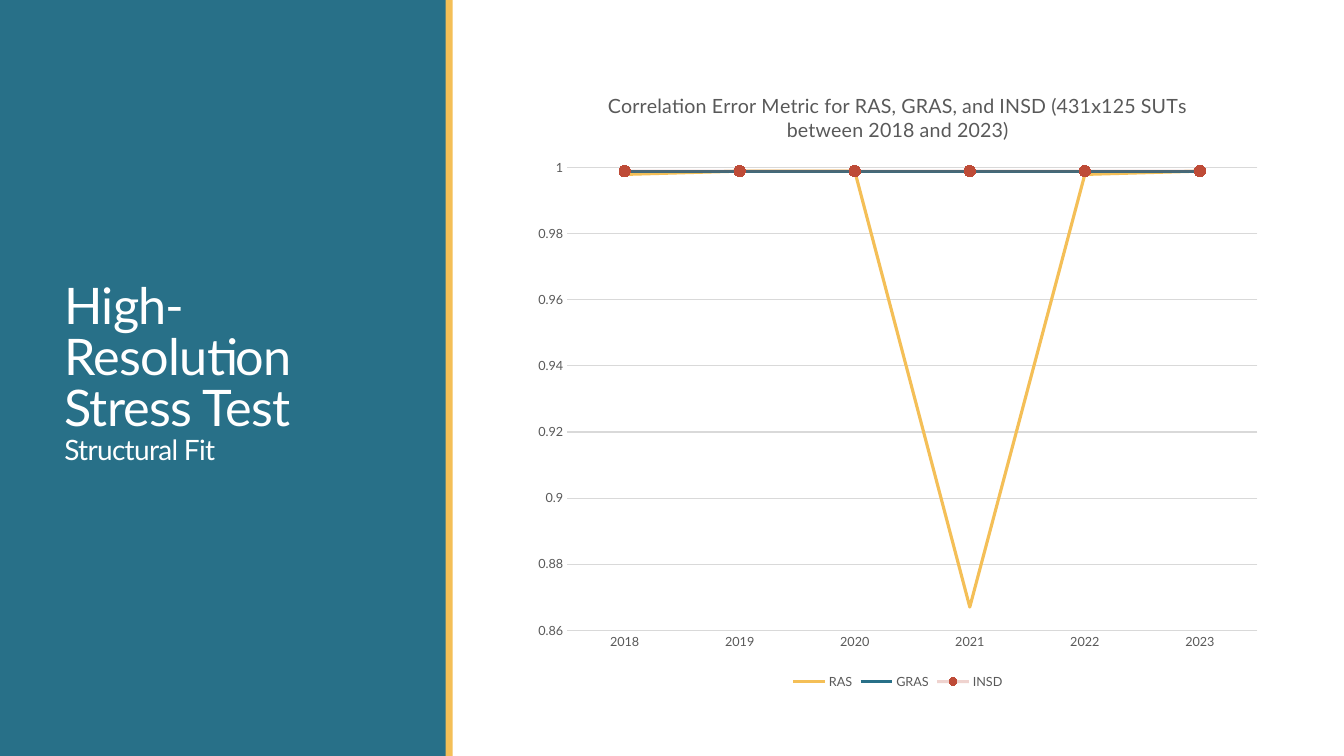
"""Build the slide on structural fit in the high-resolution stress test."""
from lxml import etree
from pptx import Presentation
from pptx import util as u
from pptx.chart.data import CategoryChartData
from pptx.dml.color import RGBColor
from pptx.enum import chart as charts, shapes, text
from pptx.oxml.ns import qn

FONT = "Lato"
COLORS = {"teal": "287088", "gold": "F4BF57", "red": "BE4B37",
          "white": "FFFFFF", "gray": "595959", "grid": "D9D9D9"}
PANELS = [("teal", 0, 4.43), ("gold", 4.42, 0.07)]
HEADING = [("High-Resolution Stress Test", 36), ("Structural Fit", 20)]
HEADING_AREA = (0.54, 0.56, 3.37, 6.31)
CHART_AREA = (5.19, 0.69, 7.43, 6.19)
CHART_TITLE = "Correlation Error Metric for RAS, GRAS, and INSD (431x125 SUTs between 2018 and 2023)"
YEARS = ["2018", "2019", "2020", "2021", "2022", "2023"]
SERIES = [
    ("RAS", "gold", [0.998, 0.999, 0.999, 0.867, 0.998, 0.999]),
    ("GRAS", "teal", [0.999, 0.999, 0.999, 0.999, 0.999, 0.999]),
    ("INSD", "red", [0.999, 0.999, 0.999, 0.999, 0.999, 0.999]),
]


def set_values(target, **values):
    for name, value in values.items():
        setattr(target, name, value)


def rgb(color):
    return RGBColor.from_string(COLORS[color])


def set_font(font, size, color):
    set_values(font, name=FONT, size=u.Pt(size), bold=False)
    font.color.rgb = rgb(color)


def set_line(line, color, width):
    line.color.rgb = rgb(color)
    line.width = u.Pt(width)


def add_panel(page, color, left, width, height):
    panel = page.shapes.add_shape(shapes.MSO_SHAPE.RECTANGLE, u.Inches(left), 0,
                                  u.Inches(width), height)
    panel.shadow.inherit = False
    panel.fill.solid()
    panel.fill.fore_color.rgb = rgb(color)
    panel.line.fill.background()


def add_heading(page):
    box = page.shapes.add_textbox(*map(u.Inches, HEADING_AREA))
    set_values(box.text_frame, word_wrap=True, vertical_anchor=text.MSO_ANCHOR.MIDDLE)
    para = box.text_frame.paragraphs[0]
    para.line_spacing = 0.85
    for index, (words, size) in enumerate(HEADING):
        if index:
            para.add_line_break()
        span = para.add_run()
        span.text = words
        set_font(span.font, size, "white")
        span.font._element.set("spc", "-50")


def style_axes(chart):
    for axis in (chart.category_axis, chart.value_axis):
        set_values(axis, major_tick_mark=charts.XL_TICK_MARK.NONE,
                   minor_tick_mark=charts.XL_TICK_MARK.NONE)
        set_font(axis.tick_labels.font, 9, "gray")
    set_line(chart.category_axis.format.line, "grid", 0.75)
    values = chart.value_axis
    set_values(values, minimum_scale=0.86, maximum_scale=1, major_unit=0.02,
               has_major_gridlines=True)
    values.format.line.fill.background()
    set_line(values.major_gridlines.format.line, "grid", 0.75)
    set_values(values.tick_labels, number_format="General", number_format_is_linked=False)


def style_series(chart):
    chart.plots[0].vary_by_categories = False
    for series, (name, color, _) in zip(chart.plots[0].series, SERIES):
        series.smooth = False
        set_line(series.format.line, color, 2.25)
        series.marker.style = charts.XL_MARKER_STYLE.NONE
        if name == "INSD":
            set_values(series.marker, style=charts.XL_MARKER_STYLE.CIRCLE, size=8)
            series.marker.format.fill.solid()
            series.marker.format.fill.fore_color.rgb = rgb(color)
            set_line(series.marker.format.line, color, 0.75)
            tint = series._element.xpath("c:spPr/a:ln/a:solidFill/a:srgbClr")[0]
            etree.SubElement(tint, qn("a:alpha")).set("val", "23000")


def add_line_chart(page):
    data = CategoryChartData()
    data.categories = YEARS
    for name, _, values in SERIES:
        data.add_series(name, values)
    chart = page.shapes.add_chart(charts.XL_CHART_TYPE.LINE_MARKERS,
                                  *map(u.Inches, CHART_AREA), data).chart
    set_values(chart.font, name=FONT, size=u.Pt(10))
    set_values(chart, has_title=True, has_legend=True)
    chart.chart_title.include_in_layout = False
    span = chart.chart_title.text_frame.paragraphs[0].add_run()
    span.text = CHART_TITLE
    set_font(span.font, 14, "gray")
    set_values(chart.legend, position=charts.XL_LEGEND_POSITION.BOTTOM, include_in_layout=False)
    set_font(chart.legend.font, 9, "gray")
    style_axes(chart)
    style_series(chart)


def main():
    deck = Presentation()
    set_values(deck, slide_width=u.Inches(13.33), slide_height=u.Inches(7.5))
    page = deck.slides.add_slide(deck.slide_layouts[6])
    for color, left, width in PANELS:
        add_panel(page, color, left, width, deck.slide_height)
    add_heading(page)
    add_line_chart(page)
    deck.save("out.pptx")


if __name__ == "__main__":
    main()
